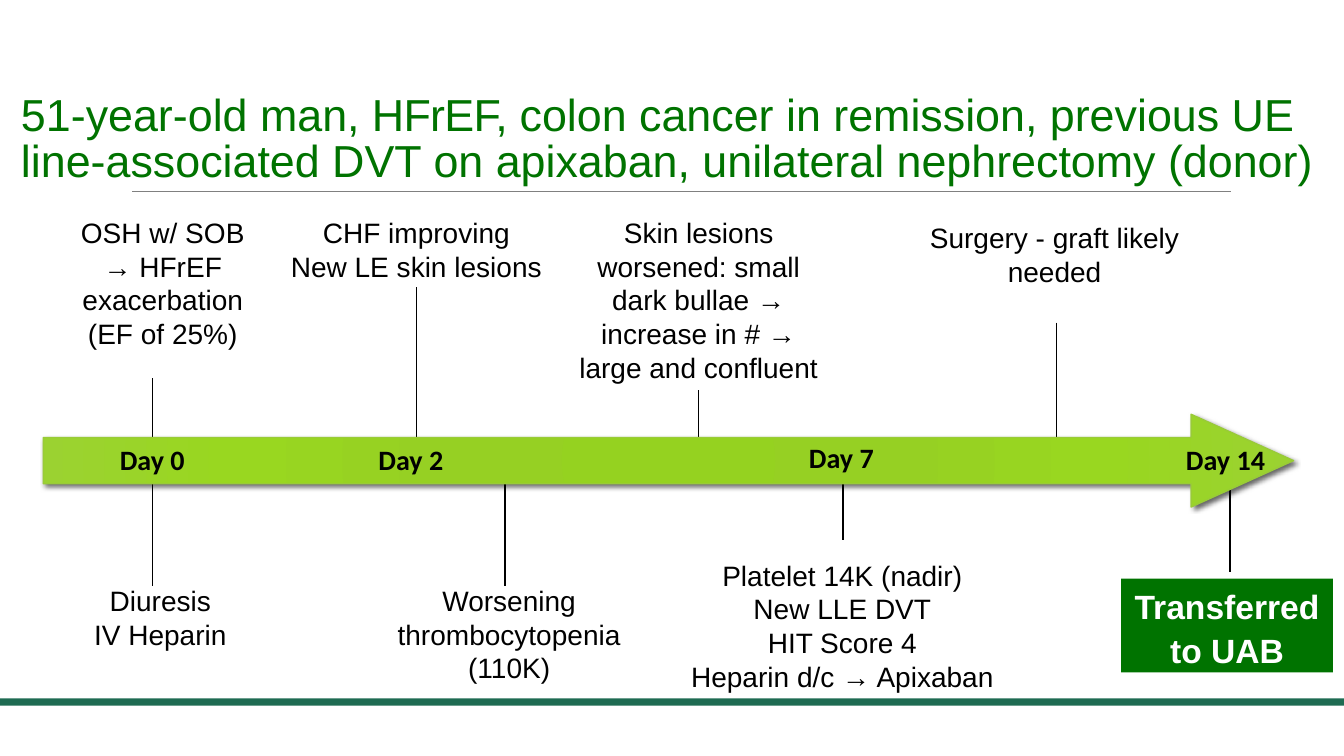
from lxml.etree import SubElement
from pptx import Presentation
from pptx.dml.color import RGBColor
from pptx.enum.shapes import MSO_CONNECTOR, MSO_SHAPE
from pptx.enum.text import MSO_ANCHOR, MSO_AUTO_SIZE, PP_ALIGN
from pptx.oxml import parse_xml
from pptx.oxml.ns import nsdecls, qn
from pptx.util import Inches, Pt

BLACK, WHITE, GREEN = "000000", "FFFFFF", "007300"
TITLE = [
    ("51-year-old man,", 0),
    (" HFrEF, ", -50),
    ("colon cancer in remission, previous UE line-associated DVT on apixaban, "
     "unilateral nephrectomy (donor)", 0),
]
ARROW_TOP, ARROW_BOTTOM = 4.42, 4.69
STEMS = [
    (12.2, 4.67, 5.67),
    (10.48, 3.2, ARROW_TOP),
    (8.36, ARROW_BOTTOM, 5.36),
    (6.93, 3.87, ARROW_TOP),
    (5.01, ARROW_BOTTOM, 5.81),
    (4.13, 2.85, ARROW_TOP),
    (1.51, ARROW_BOTTOM, 5.81),
    (1.51, 3.75, ARROW_TOP),
]
EVENTS = [
    ((0.6, 2.09, 2.03, 1.45), ["OSH w/ SOB → HFrEF exacerbation (EF of 25%)"]),
    ((2.73, 2.09, 2.8, 0.77), ["CHF improving", "New LE skin lesions"]),
    ((0.45, 5.74, 2.28, 0.77), ["Diuresis", "IV Heparin"]),
    ((5.53, 2.09, 2.8, 1.78),
     ["Skin lesions worsened: small dark bullae → increase in # → large and confluent"]),
    ((3.65, 5.74, 2.8, 1.11), ["Worsening thrombocytopenia (110K)"]),
    ((9.06, 2.14, 2.8, 0.77), ["Surgery - graft likely needed"]),
    ((6.73, 5.49, 3.25, 1.45),
     ["Platelet 14K (nadir)", "New LLE DVT", "HIT Score 4", "Heparin d/c → Apixaban"]),
]
DAYS = [
    ((0.11, 4.34, 2.8, 0.44), "Day 0"),
    ((3.23, 4.34, 1.69, 0.44), "Day 2"),
    ((7.5, 4.32, 1.69, 0.44), "Day 7"),
    ((11.31, 4.34, 1.69, 0.44), "Day 14"),
]
ARROW_STOPS = [(0, "95D220"), (34, "96D023"), (70, "99D720"), (100, "9BD231")]


def color(value):
    """Turn a hex string into a colour."""
    return RGBColor.from_string(value)


def box(values):
    """Turn left, top, width and height into lengths."""
    return [Inches(value) for value in values]


def style(paragraph, size, name, value, bold=False):
    """Set the font of a whole paragraph."""
    font = paragraph.font
    font.size, font.name, font.bold = Pt(size), name, bold
    font.color.rgb = color(value)


def write(shape, lines, size=20, name="Arial", value=BLACK, bold=False, spacing=None):
    """Write centred lines from the top of a shape."""
    frame = shape.text_frame
    frame.word_wrap = True
    frame.auto_size = MSO_AUTO_SIZE.SHAPE_TO_FIT_TEXT
    frame.vertical_anchor = MSO_ANCHOR.TOP
    frame.text = "\n".join(lines)
    for paragraph in frame.paragraphs:
        paragraph.alignment = PP_ALIGN.CENTER
        paragraph.line_spacing = spacing
        style(paragraph, size, name, value, bold)


def add_rectangle(slide, at, fill):
    """Add a plain filled rectangle."""
    shape = slide.shapes.add_shape(MSO_SHAPE.RECTANGLE, *box(at))
    shape.shadow.inherit = False
    shape.fill.solid()
    shape.fill.fore_color.rgb = color(fill)
    shape.line.fill.background()
    return shape


def add_line(slide, start, end, value, width):
    """Add a straight line without a shadow."""
    line = slide.shapes.add_connector(MSO_CONNECTOR.STRAIGHT, *box(start + end))
    line.line.color.rgb = color(value)
    line.line.width = Pt(width)
    SubElement(line._element.spPr, qn("a:effectLst"))


def add_title(slide):
    """Add the case summary above the rule."""
    frame = slide.shapes.add_textbox(*box((0.11, 0.31, 13.11, 1.59))).text_frame
    frame.word_wrap = True
    frame.vertical_anchor = MSO_ANCHOR.BOTTOM
    paragraph = frame.paragraphs[0]
    paragraph.line_spacing = 0.85
    style(paragraph, 32, "Arial", GREEN)
    for text, tracking in TITLE:
        run = paragraph.add_run()
        run.text = text
        if tracking:
            run._r.get_or_add_rPr().set("spc", str(tracking))


def add_arrow(slide):
    """Add the timeline arrow with its radial gradient and shadow."""
    arrow = slide.shapes.add_shape(MSO_SHAPE.RIGHT_ARROW, *box((0.43, 4.11, 12.4, 0.92)))
    arrow.adjustments[0], arrow.adjustments[1] = 0.5, 1.104
    arrow.line.color.rgb = color("99CB38")
    arrow.line.width = Pt(1)
    stops = "".join(
        f'<a:gs pos="{position * 1000}"><a:srgbClr val="{value}"/></a:gs>'
        for position, value in ARROW_STOPS)
    gradient = parse_xml(
        f'<a:gradFill {nsdecls("a")} rotWithShape="1"><a:gsLst>{stops}</a:gsLst>'
        '<a:path path="circle"><a:fillToRect l="100000" t="100000" r="100000" b="100000"/>'
        '</a:path></a:gradFill>')
    shadow = parse_xml(
        f'<a:effectLst {nsdecls("a")}><a:outerShdw blurRad="{Pt(3)}" dist="{Pt(2)}" '
        f'dir="{45 * 60000}" rotWithShape="0"><a:srgbClr val="{BLACK}">'
        '<a:alpha val="60000"/></a:srgbClr></a:outerShdw></a:effectLst>')
    properties = arrow._element.spPr
    properties.find(qn("a:prstGeom")).addnext(gradient)
    properties.find(qn("a:ln")).addnext(shadow)


def main():
    """Build the hospital course timeline."""
    presentation = Presentation()
    presentation.slide_width, presentation.slide_height = Inches(13.33), Inches(7.5)
    slide = presentation.slides.add_slide(presentation.slide_layouts[6])
    add_rectangle(slide, (0, 6.93, 13.33, 0.07), "1E6B52")
    add_line(slide, (1.31, 1.9), (12.21, 1.9), "808080", 0.5)
    for x, top, bottom in STEMS:
        add_line(slide, (x, top), (x, bottom), BLACK, 1)
    add_title(slide)
    add_arrow(slide)
    for at, lines in EVENTS:
        write(slide.shapes.add_textbox(*box(at)), lines)
    transfer = add_rectangle(slide, (11.12, 5.74, 2.1, 0.93), GREEN)
    write(transfer, ["Transferred to UAB"], 24, value=WHITE, bold=True, spacing=1.07)
    for at, day in DAYS:
        write(slide.shapes.add_textbox(*box(at)), [day], name="Calibri", bold=True)
    presentation.save("out.pptx")


if __name__ == "__main__":
    main()
